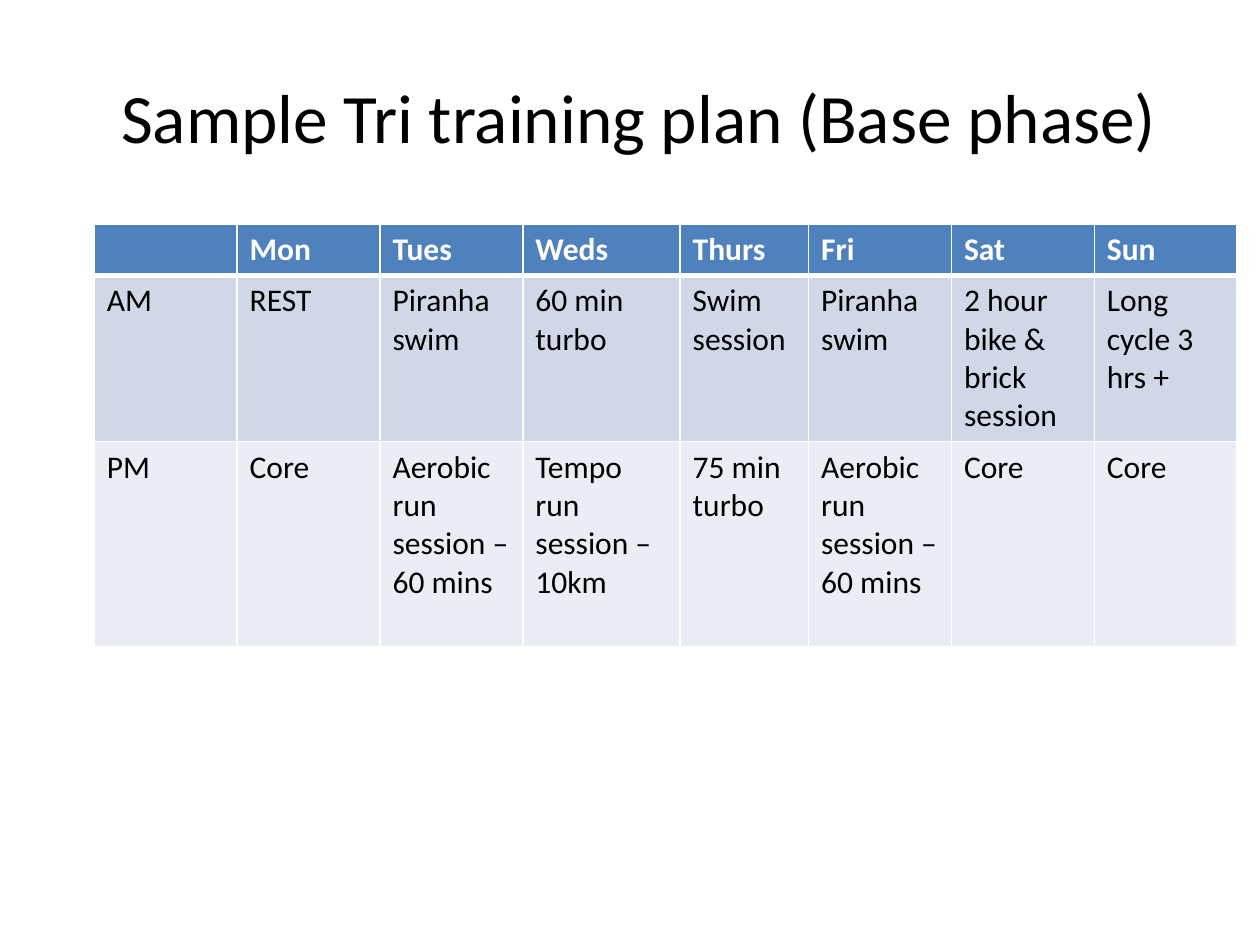
from pptx import Presentation
from pptx.dml.color import RGBColor
from pptx.enum.text import MSO_ANCHOR, PP_ALIGN
from pptx.oxml.ns import qn
from pptx.util import Cm, Pt
from lxml.etree import SubElement

COLORS = {
    "header": "4F81BD",
    "am": "D0D8E8",
    "pm": "E9EDF4",
    "light": "FFFFFF",
    "dark": "000000",
}
SCHEDULE = [
    ["", "Mon", "Tues", "Weds", "Thurs", "Fri", "Sat", "Sun"],
    ["AM", "REST", "Piranha swim", "60 min turbo", "Swim\nsession",
     "Piranha swim", "2 hour bike & brick session", "Long cycle 3 hrs +"],
    ["PM", "Core", "Aerobic run session – 60 mins", "Tempo run session – 10km",
     "75 min turbo", "Aerobic run session – 60 mins", "Core", "Core"],
]
ROW_FILLS = ["header", "am", "pm"]
ROW_HEIGHTS = [1.03, 3.35, 4.13]
DAY_WIDTHS = [2.88, 2.88, 2.88, 3.17, 2.59, 2.88, 2.88, 2.88]


def add_run(paragraph, text, size, color, bold=False):
    run = paragraph.add_run()
    run.text = text
    run.font.name = "Calibri"
    run.font.size = Pt(size)
    run.font.bold = bold
    run.font.color.rgb = RGBColor.from_string(COLORS[color])


def add_border(cell, side, width):
    line = SubElement(cell._tc.get_or_add_tcPr(), qn(f"a:{side}"), w=str(Pt(width)))
    fill = SubElement(line, qn("a:solidFill"))
    SubElement(fill, qn("a:srgbClr"), val=COLORS["light"])


prs = Presentation()
prs.slide_width, prs.slide_height = Cm(25.4), Cm(19.05)
slide = prs.slides.add_slide(prs.slide_layouts[5])

title = slide.shapes.title
title.left, title.top, title.width, title.height = Cm(2.11), Cm(0.74), Cm(22.43), Cm(3.18)
title.text_frame.vertical_anchor = MSO_ANCHOR.MIDDLE
title.text_frame.margin_left, title.text_frame.margin_right = Cm(0), Cm(0.89)
heading = title.text_frame.paragraphs[0]
heading.alignment = PP_ALIGN.CENTER
add_run(heading, "Sample Tri training plan (Base phase)", 39.6, "dark")

plan = slide.shapes.add_table(
    len(SCHEDULE), len(DAY_WIDTHS), Cm(1.9), Cm(4.52),
    Cm(sum(DAY_WIDTHS)), Cm(sum(ROW_HEIGHTS))).table
for column, width in zip(plan.columns, DAY_WIDTHS):
    column.width = Cm(width)

for r, sessions in enumerate(SCHEDULE):
    plan.rows[r].height = Cm(ROW_HEIGHTS[r])
    is_header = r == 0
    for c, session in enumerate(sessions):
        cell = plan.cell(r, c)
        for side in ("lnL", "lnR", "lnT", "lnB"):
            thick = (is_header and side == "lnB") or (r == 1 and side == "lnT")
            add_border(cell, side, 3 if thick else 1)
        cell.fill.solid()
        cell.fill.fore_color.rgb = RGBColor.from_string(COLORS[ROW_FILLS[r]])
        for i, line in enumerate(session.split("\n") if session else []):
            frame = cell.text_frame
            paragraph = frame.add_paragraph() if i else frame.paragraphs[0]
            add_run(paragraph, line, 18, "light" if is_header else "dark", is_header)

prs.save("out.pptx")
